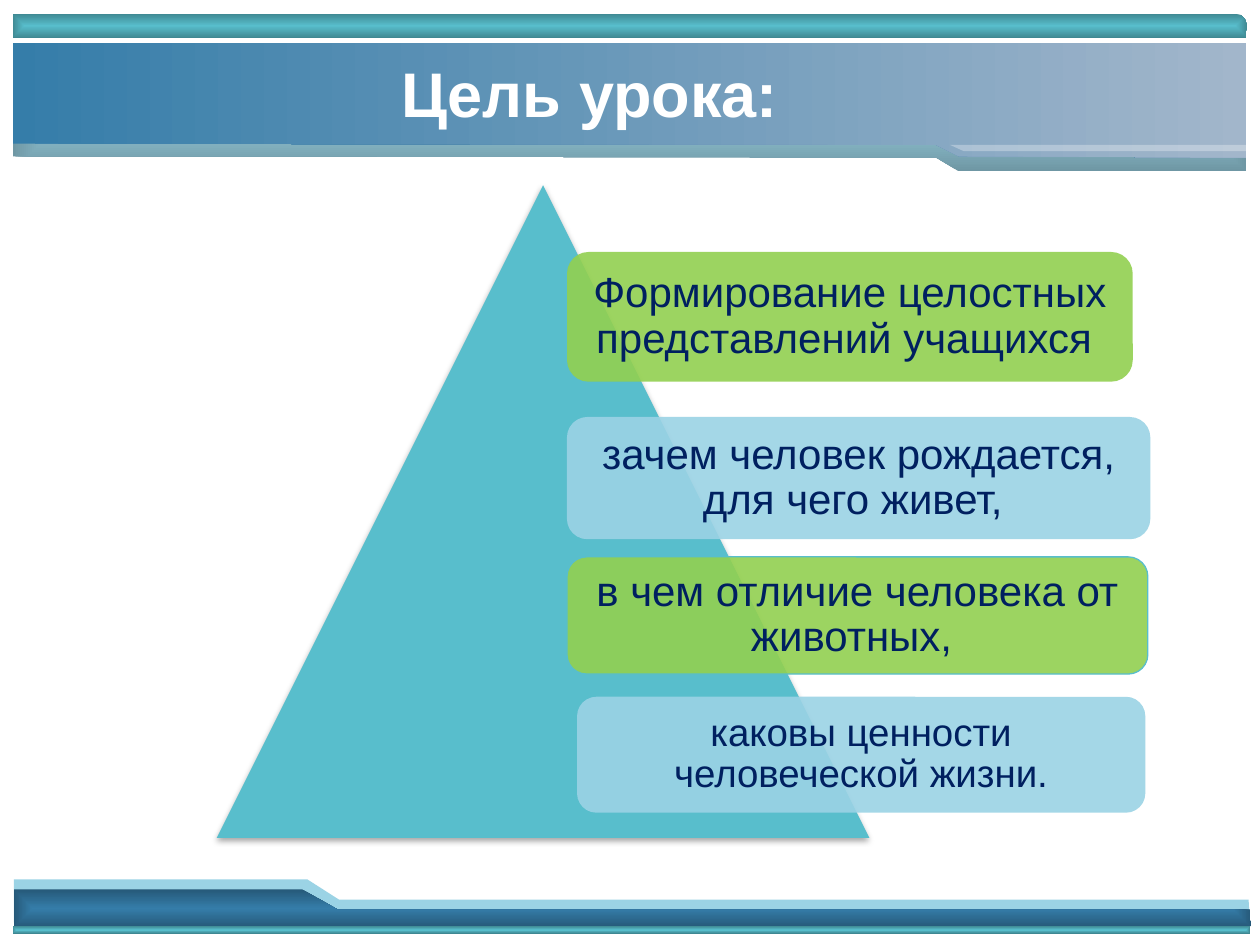
from lxml.etree import SubElement
from pptx import Presentation
from pptx.dml.color import RGBColor
from pptx.enum.shapes import MSO_SHAPE as Shape
from pptx.enum.text import MSO_ANCHOR as Anchor, PP_ALIGN as Align
from pptx.oxml import parse_xml
from pptx.oxml.ns import nsdecls, qn
from pptx.util import Inches, Pt

TEAL, BLUE, SKY, GREEN, NAVY, WHITE = "58BECC", "357DA9", "9BD3E5", "92D050", "002060", "FFFFFF"
DARK_TEAL = "3F8892"

# Outline points in inches; a fill is (colour, opacity %) or (first, last, gradient kind)
BANDS = [
    ([(0.11, 7.32), (9.92, 7.32), (9.91, 7.14), (2.69, 7.14), (2.44, 6.98), (0.11, 6.98)],
     (SKY, 100)),
    ([(0.11, 7.36), (9.93, 7.35), (9.92, 7.22), (2.68, 7.22), (2.4, 7.06), (0.11, 7.06)],
     (BLUE, "265979", "rect")),
    ([(0.1, 0.11), (9.8, 0.11), (9.85, 0.12), (9.88, 0.15), (9.9, 0.19), (9.89, 0.3), (0.1, 0.3)],
     (TEAL, DARK_TEAL, "rect")),
    ([(9.89, 0.34), (0.1, 0.34), (0.1, 1.24), (7.43, 1.25), (7.61, 1.36), (9.89, 1.36)],
     (SKY, "6F97A4", "rect")),
    ([(9.89, 0.34), (0.1, 0.34), (0.1, 1.14), (7.43, 1.15), (7.61, 1.24), (9.89, 1.25)],
     (BLUE, "A2B6CB", "linear")),
    ([(0.1, 7.35), (9.92, 7.35), (9.92, 7.41), (0.1, 7.41)],
     (TEAL, DARK_TEAL, "rect")),
    ([(7.54, 1.15), (9.9, 1.15), (9.9, 1.2), (7.65, 1.2)],
     (WHITE, 30)),
]
TITLE = "Цель урока:"
# text, box (left, top, width, height), size, outline colour
GOALS = [
    ("Формирование целостных представлений учащихся ", (4.5, 2, 4.49, 1.03), 24, None),
    ("зачем человек рождается, для чего живет, ", (4.5, 3.31, 4.63, 0.97), 24, None),
    ("в чем отличие человека от животных, ", (4.5, 4.42, 4.61, 0.93), 24, TEAL),
    ("каковы ценности человеческой жизни.", (4.58, 5.53, 4.51, 0.92), 22, None),
]


def rgb(value):
    return RGBColor.from_string(value)


def inches(values):
    return [Inches(value) for value in values]


def paint_solid(shape, color, opacity=100):
    shape.fill.solid()
    shape.fill.fore_color.rgb = rgb(color)
    if opacity < 100:
        color_element = shape._element.spPr.find(qn("a:solidFill"))[0]
        SubElement(color_element, qn("a:alpha"), val=str(opacity * 1000))


def paint_gradient(shape, first, last, kind):
    fill = shape.fill
    fill.gradient()
    fill.gradient_angle = 0
    for stop, color, position in zip(fill.gradient_stops, (first, last), (0, 1)):
        stop.color.rgb = rgb(color)
        stop.position = position
    if kind != "linear":
        gradient = shape._element.spPr.find(qn("a:gradFill"))
        gradient.replace(gradient.find(qn("a:lin")), parse_xml(
            f'<a:path {nsdecls("a")} path="{kind}">'
            '<a:fillToRect l="50000" t="50000" r="50000" b="50000"/></a:path>'))


def add_band(slide, points, fill):
    start, *rest = [inches(point) for point in points]
    builder = slide.shapes.build_freeform(*start, scale=1.0)
    builder.add_line_segments(rest, close=True)
    shape = builder.convert_to_shape()
    shape.shadow.inherit = False
    shape.line.fill.background()
    (paint_solid if len(fill) == 2 else paint_gradient)(shape, *fill)


def add_preset(slide, preset, box, color, opacity=100):
    shape = slide.shapes.add_shape(preset, *inches(box))
    shape.shadow.inherit = False
    shape.line.fill.background()
    paint_solid(shape, color, opacity)
    return shape


def write(shape, text, size, color, inset, spacing=1.0, bold=False):
    frame = shape.text_frame
    frame.word_wrap = True
    frame.vertical_anchor = Anchor.MIDDLE
    for side in ("left", "right", "top", "bottom"):
        setattr(frame, f"margin_{side}", Inches(inset))
    paragraph = frame.paragraphs[0]
    paragraph.alignment = Align.CENTER
    paragraph.line_spacing = spacing
    run = paragraph.add_run()
    run.text = text
    for name, value in dict(name="Arial", size=Pt(size), bold=bold).items():
        setattr(run.font, name, value)
    run.font.color.rgb = rgb(color)


def add_soft_shadow(shape):
    effects = shape._element.spPr.find(qn("a:effectLst"))
    effects.append(parse_xml(
        f'<a:outerShdw {nsdecls("a")} blurRad="{Pt(3.1)}" dist="{Pt(1.8)}" dir="5400000" '
        'rotWithShape="0"><a:srgbClr val="000000"><a:alpha val="35000"/></a:srgbClr>'
        '</a:outerShdw>'))


def main():
    presentation = Presentation()
    presentation.slide_width, presentation.slide_height = inches((10, 7.5))
    slide = presentation.slides.add_slide(presentation.slide_layouts[6])

    for points, fill in BANDS:
        add_band(slide, points, fill)

    title = slide.shapes.add_textbox(*inches((0.5, 0.26, 8.36, 0.95)))
    write(title, TITLE, 36, WHITE, inset=0.05, bold=True)

    add_soft_shadow(add_preset(slide, Shape.ISOSCELES_TRIANGLE, (1.72, 1.47, 5.18, 5.18), TEAL))

    for index, (text, box, size, outline) in enumerate(GOALS):
        card = add_preset(slide, Shape.ROUNDED_RECTANGLE, box, (GREEN, SKY)[index % 2], 90)
        if outline:
            card.line.color.rgb = rgb(outline)
            card.line.width = Pt(0.75)
        write(card, text, size, NAVY, inset=0.05, spacing=0.9)

    presentation.save("out.pptx")


if __name__ == "__main__":
    main()
